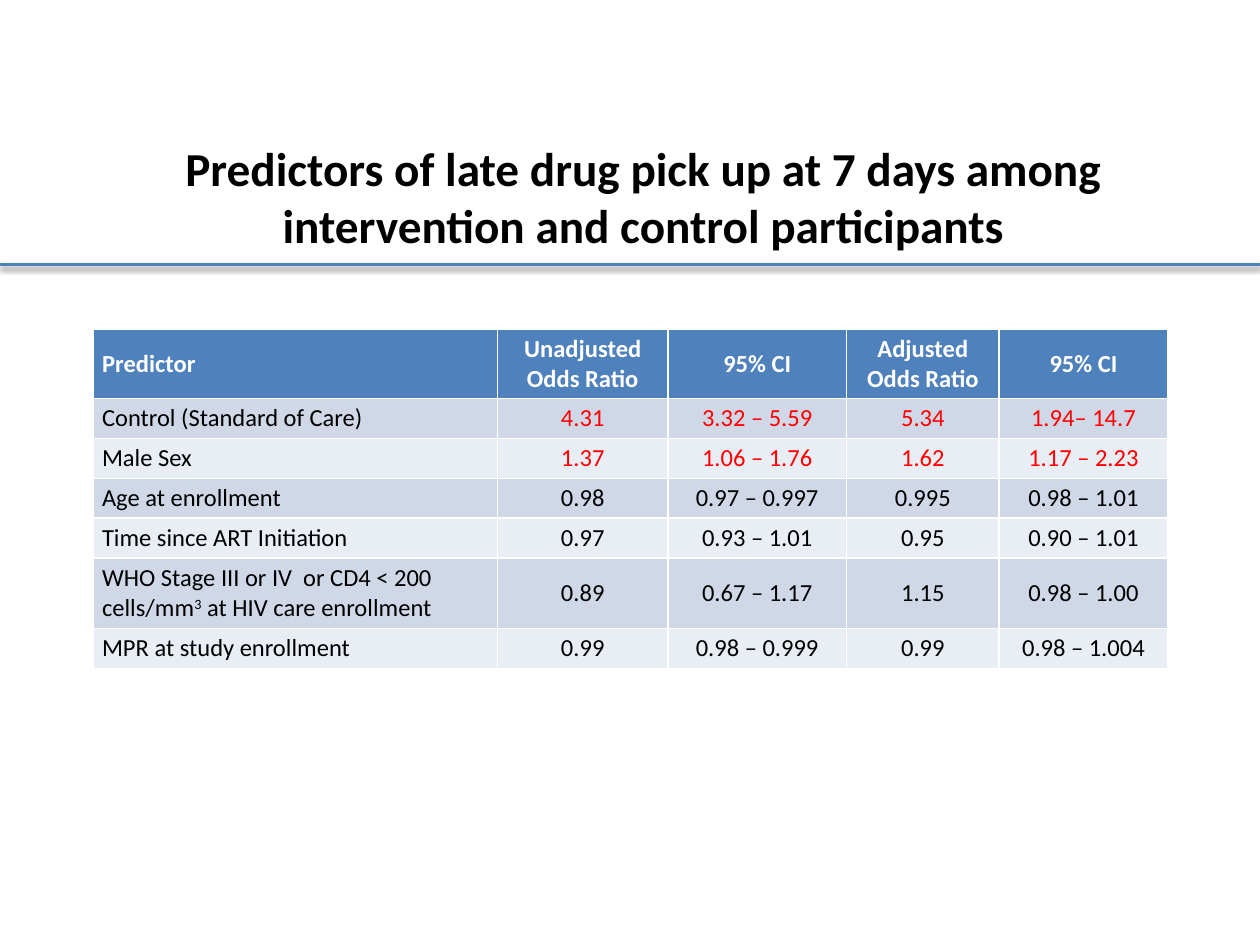
"""Build a slide with a table of predictors of late drug pick up."""
from dataclasses import dataclass

from lxml import etree
from pptx import Presentation
from pptx.dml.color import RGBColor
from pptx.enum.shapes import MSO_CONNECTOR
from pptx.enum.text import MSO_ANCHOR, PP_ALIGN
from pptx.oxml.ns import qn
from pptx.util import Inches, Pt

STRAIGHT = MSO_CONNECTOR.STRAIGHT
MIDDLE = MSO_ANCHOR.MIDDLE
CENTER, LEFT = PP_ALIGN.CENTER, PP_ALIGN.LEFT


@dataclass(frozen=True)
class Theme:
    font: str = "Calibri"
    title_size: Pt = Pt(27)
    table_size: Pt = Pt(14)
    rule_width: Pt = Pt(2)
    text: RGBColor = RGBColor(0, 0, 0)
    header_text: RGBColor = RGBColor(255, 255, 255)
    highlight: RGBColor = RGBColor(255, 0, 0)
    accent: RGBColor = RGBColor(0x4F, 0x81, 0xBD)
    bands: tuple = (RGBColor(0xE9, 0xED, 0xF4), RGBColor(0xD0, 0xD8, 0xE8))


THEME = Theme()
COLUMN_WIDTHS = (3.21, 1.35, 1.42, 1.21, 1.34)
ROW_HEIGHTS = (0.53, 0.31, 0.31, 0.31, 0.31, 0.56, 0.31)
HIGHLIGHTED_ROWS = (1, 2)
SUPERSCRIPT = "3"
ROWS = (
    ("Predictor", "Unadjusted Odds Ratio", "95% CI", "Adjusted Odds Ratio", "95% CI"),
    ("Control (Standard of Care)", "4.31", "3.32 – 5.59", "5.34", "1.94– 14.7"),
    ("Male Sex", "1.37", "1.06 – 1.76", "1.62", "1.17 – 2.23"),
    ("Age at enrollment", "0.98", "0.97 – 0.997", "0.995", "0.98 – 1.01"),
    ("Time since ART Initiation", "0.97", "0.93 – 1.01", "0.95", "0.90 – 1.01"),
    (("WHO Stage III or IV  or CD4 < 200 cells/mm", SUPERSCRIPT, " at HIV care enrollment"),
     "0.89", "0.67 – 1.17", "1.15", "0.98 – 1.00"),
    ("MPR at study enrollment", "0.99", "0.98 – 0.999", "0.99", "0.98 – 1.004"),
)


def style_paragraph(paragraph, size, color, bold, alignment):
    paragraph.alignment = alignment
    paragraph.font.name = THEME.font
    paragraph.font.size = size
    paragraph.font.bold = bold
    paragraph.font.color.rgb = color


presentation = Presentation()
presentation.slide_width, presentation.slide_height = Inches(10), Inches(7.5)
slide = presentation.slides.add_slide(presentation.slide_layouts[6])

table = slide.shapes.add_table(
    len(ROWS), len(COLUMN_WIDTHS), Inches(0.74), Inches(2.61),
    Inches(sum(COLUMN_WIDTHS)), Inches(sum(ROW_HEIGHTS))).table
for column, width in zip(table.columns, COLUMN_WIDTHS):
    column.width = Inches(width)

for row_index, (values, height) in enumerate(zip(ROWS, ROW_HEIGHTS)):
    table.rows[row_index].height = Inches(height)
    is_header = row_index == 0
    for column_index, value in enumerate(values):
        cell = table.cell(row_index, column_index)
        cell.vertical_anchor = MIDDLE
        cell.margin_left = cell.margin_right = Inches(0.07)
        cell.margin_top = cell.margin_bottom = Inches(0.04)
        cell.fill.solid()
        cell.fill.fore_color.rgb = THEME.accent if is_header else THEME.bands[row_index % 2]
        color = THEME.header_text if is_header else THEME.text
        if row_index in HIGHLIGHTED_ROWS and column_index > 0:
            color = THEME.highlight
        paragraph = cell.text_frame.paragraphs[0]
        style_paragraph(paragraph, THEME.table_size, color, is_header,
                        CENTER if column_index else LEFT)
        for part in (value,) if isinstance(value, str) else value:
            run = paragraph.add_run()
            run.text = part
            if part == SUPERSCRIPT:
                run._r.get_or_add_rPr().set("baseline", "30000")

title = slide.shapes.add_textbox(Inches(0.57), Inches(1.01), Inches(9.07), Inches(1.09))
title.text_frame.word_wrap = True
title.text_frame.vertical_anchor = MIDDLE
title.text_frame.text = (
    "Predictors of late drug pick up at 7 days among intervention and control participants")
style_paragraph(title.text_frame.paragraphs[0], THEME.title_size, THEME.text, True, CENTER)

rule = slide.shapes.add_connector(STRAIGHT, Inches(0), Inches(2.1), Inches(10), Inches(2.1))
rule.line.color.rgb = THEME.accent
rule.line.width = THEME.rule_width
effects = etree.SubElement(rule._element.spPr, qn("a:effectLst"))
shadow = etree.SubElement(effects, qn("a:outerShdw"), blurRad=str(Pt(3.1)),
                          dist=str(Pt(1.6)), dir="5400000", rotWithShape="0")
shadow_color = etree.SubElement(shadow, qn("a:srgbClr"), val=str(THEME.text))
etree.SubElement(shadow_color, qn("a:alpha"), val="38000")

presentation.save("out.pptx")
